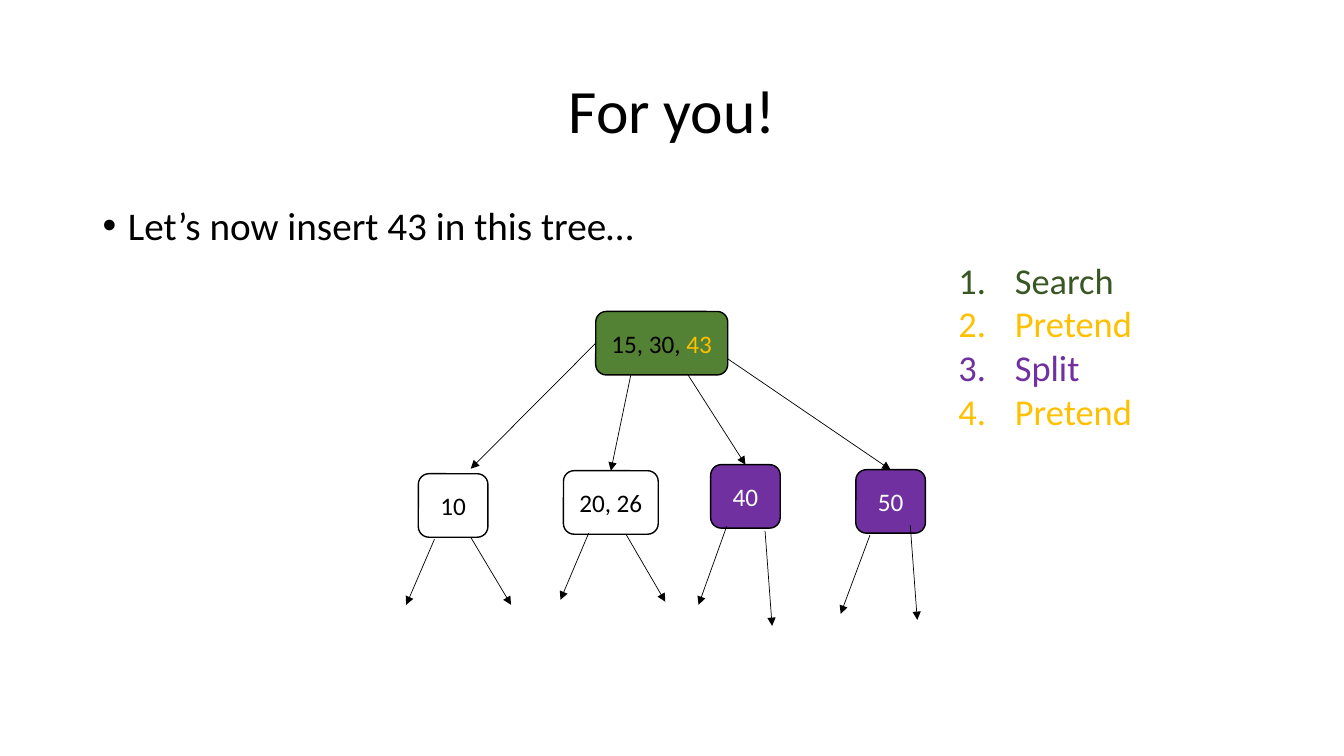
"""Build the slide on inserting 43 into a search tree, on a grid of 0.1 inch cells."""
from lxml.etree import SubElement
from pptx import Presentation
from pptx.dml.color import RGBColor
from pptx.enum.shapes import MSO_CONNECTOR, MSO_SHAPE
from pptx.enum.text import MSO_ANCHOR, MSO_AUTO_SIZE, PP_ALIGN
from pptx.oxml.ns import qn
from pptx.util import Inches, Pt

BLACK = RGBColor(0x00, 0x00, 0x00)
WHITE = RGBColor(0xFF, 0xFF, 0xFF)
GREEN = RGBColor(0x54, 0x82, 0x35)
DARK_GREEN = RGBColor(0x38, 0x57, 0x23)
GOLD = RGBColor(0xFF, 0xC0, 0x00)
PURPLE = RGBColor(0x70, 0x30, 0xA0)
CELL = Inches(0.1)
TOP, LEFT = 0, 1


def grid(*cells):
    return [round(cell * CELL) for cell in cells]


def write(paragraph, text, size, color):
    run = paragraph.add_run()
    run.text = text
    for name, value in {"name": "Calibri", "size": Pt(size)}.items():
        setattr(run.font, name, value)
    run.font.color.rgb = color


deck = Presentation()
deck.slide_width, deck.slide_height = grid(133.33, 75)
slide = deck.slides.add_slide(deck.slide_layouts[5])
shapes = slide.shapes

heading = shapes.title
for name, value in zip(("left", "top", "width", "height"), grid(9.2, 4, 115, 14.5)):
    setattr(heading, name, value)
heading.text_frame.vertical_anchor = MSO_ANCHOR.MIDDLE
heading_line = heading.text_frame.paragraphs[0]
for name, value in {"alignment": PP_ALIGN.CENTER, "line_spacing": 0.9}.items():
    setattr(heading_line, name, value)
write(heading_line, "For you!", 44, BLACK)

task = shapes.add_textbox(*grid(9.2, 20, 115, 47.6)).text_frame
steps = shapes.add_textbox(*grid(94.1, 25.1, 27.3, 18.5)).text_frame
steps.auto_size = MSO_AUTO_SIZE.SHAPE_TO_FIT_TEXT
lists = [
    (task, 2.5, 28, 0.9, "buChar", {"char": "•"},
     [("Let’s now insert 43 in this tree…", BLACK)]),
    (steps, 5.6, 26, 1.0, "buAutoNum", {"type": "arabicPeriod"},
     [("Search", DARK_GREEN), ("Pretend", GOLD), ("Split", PURPLE), ("Pretend", GOLD)]),
]
for frame, indent, size, spacing, marker, marker_format, items in lists:
    frame.word_wrap = True
    for index, (text, color) in enumerate(items):
        item = frame.add_paragraph() if index else frame.paragraphs[0]
        properties = item._p.get_or_add_pPr()
        for name, cells in {"marL": indent, "indent": -indent}.items():
            properties.set(name, str(grid(cells)[0]))
        SubElement(properties, qn("a:buFont"), typeface="Arial" if marker == "buChar" else "+mj-lt")
        SubElement(properties, qn(f"a:{marker}"), **marker_format)
        item.line_spacing = spacing
        write(item, text, size, color)

NODE_HEIGHT = 6.3
tree = {
    "root": (59.1, 30.9, 13.1, GREEN, [("15, 30, ", BLACK), ("43", GOLD)]),
    "10": (41.5, 47, 6.9, None, [("10", BLACK)]),
    "20": (55.9, 46.7, 9.4, None, [("20, 26", BLACK)]),
    "40": (70.5, 46.1, 6.9, PURPLE, [("40", WHITE)]),
    "50": (84.9, 46.6, 6.9, PURPLE, [("50", WHITE)]),
}
nodes = {}
for key, (left, top, width, fill, keys) in tree.items():
    node = shapes.add_shape(MSO_SHAPE.ROUNDED_RECTANGLE, *grid(left, top, width, NODE_HEIGHT))
    node.shadow.inherit = False
    if fill is None:
        node.fill.background()
    else:
        node.fill.solid()
        node.fill.fore_color.rgb = fill
    node.line.color.rgb = BLACK
    node.line.width = Pt(1)
    for name, value in {"word_wrap": False, "vertical_anchor": MSO_ANCHOR.MIDDLE}.items():
        setattr(node.text_frame, name, value)
    label = node.text_frame.paragraphs[0]
    label.alignment = PP_ALIGN.CENTER
    for text, color in keys:
        write(label, text, 18, color)
    nodes[key] = node

branches = [
    (59.1, 34, 46.7, 46.5, "root", None),
    (62.6, 37.1, 60.7, 46.7, None, "20"),
    (68.2, 37.1, 73.9, 46.1, None, "40"),
    (72.2, 35.6, 88.4, 46.6, None, "50"),
    (43.1, 53.5, 40.3, 60, None, None),
    (46.7, 53.3, 50.7, 60, None, None),
    (58.4, 52.9, 55.6, 59.5, None, None),
    (62.1, 53, 66, 59.7, None, None),
    (72.1, 52.2, 69.3, 60, None, None),
    (75.9, 52.7, 76.6, 62.1, None, None),
    (86.3, 53.1, 83.4, 60.9, None, None),
    (90.3, 52.1, 91, 61.5, None, None),
]
for *ends, parent, child in branches:
    branch = shapes.add_connector(MSO_CONNECTOR.STRAIGHT, *grid(*ends))
    if parent:
        branch.begin_connect(nodes[parent], LEFT)
    if child:
        branch.end_connect(nodes[child], TOP)
    branch.line.color.rgb = BLACK
    branch.line.width = Pt(0.5)
    SubElement(branch.line._get_or_add_ln(), qn("a:tailEnd"), type="triangle")
    SubElement(branch._element.spPr, qn("a:effectLst"))

deck.save("out.pptx")
